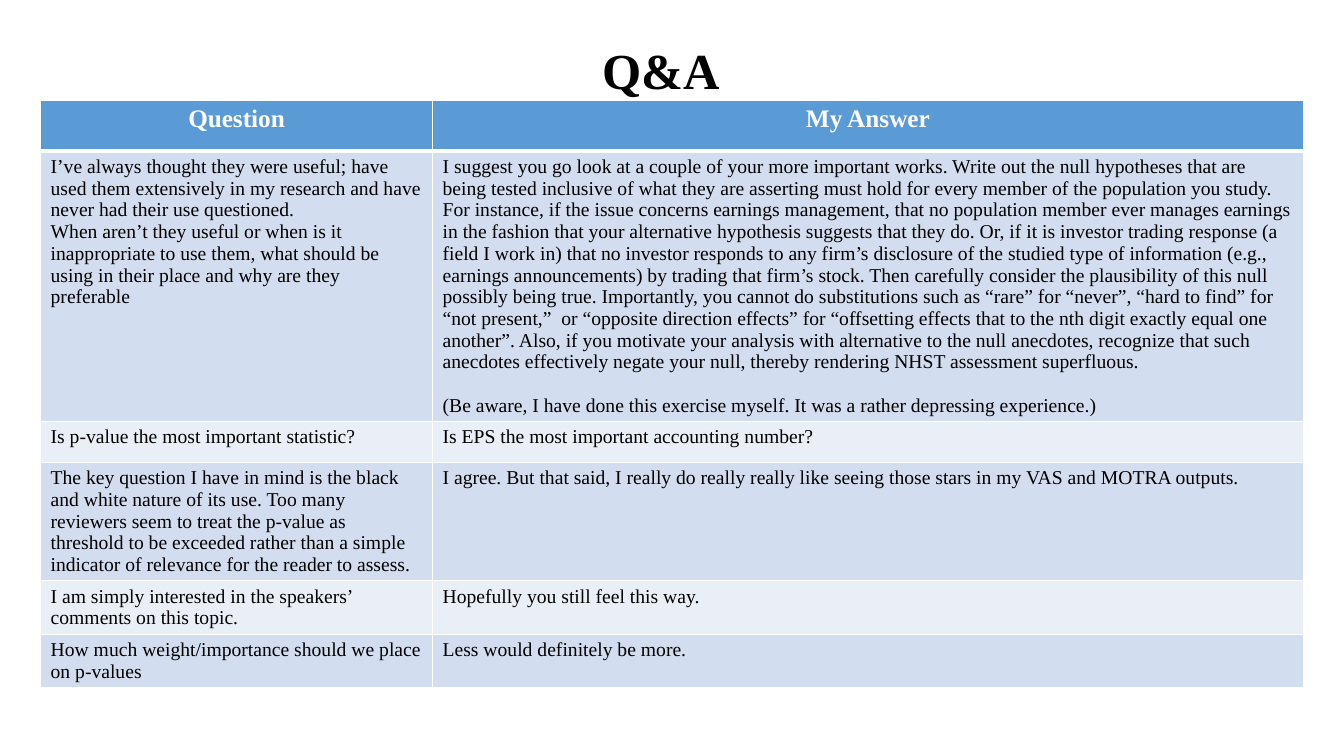
"""Build a Q&A slide: a title above a two-column table of questions and answers."""
from lxml.etree import SubElement
from pptx import Presentation
from pptx.dml.color import RGBColor
from pptx.enum.text import MSO_ANCHOR as Anchor, MSO_AUTO_SIZE as AutoSize, PP_ALIGN as Align
from pptx.oxml.ns import qn
from pptx.util import Pt

COLORS = {
    "black": "000000",
    "white": "FFFFFF",
    "header": "5B9BD5",
    "band_dark": "D2DEEF",
    "band_light": "EAEFF7",
}

HEADERS = ["Question", "My Answer"]
NULL_ADVICE = [
    "I suggest you go look at a couple of your more important works.",
    "Write out the null hypotheses that are being tested inclusive of what they are asserting "
    "must hold for every member of the population you study.",
    "For instance, if the issue concerns earnings management, that no population member ever "
    "manages earnings in the fashion that your alternative hypothesis suggests that they do.",
    "Or, if it is investor trading response (a field I work in) that no investor responds to any "
    "firm’s disclosure of the studied type of information (e.g., earnings announcements) by "
    "trading that firm’s stock.",
    "Then carefully consider the plausibility of this null possibly being true.",
    "Importantly, you cannot do substitutions such as “rare” for “never”, “hard to find” for "
    "“not present,”  or “opposite direction effects” for “offsetting effects that to the nth "
    "digit exactly equal one another”.",
    "Also, if you motivate your analysis with alternative to the null anecdotes, recognize that "
    "such anecdotes effectively negate your null, thereby rendering NHST assessment superfluous.",
]
CLOSING_REMARK = (
    "(Be aware, I have done this exercise myself. It was a rather depressing experience.)"
)
ROWS = [
    (
        "I’ve always thought they were useful; have used them extensively in my research "
        "and have never had their use questioned.\n"
        "When aren’t they useful or when is it inappropriate to use them, what should be "
        "using in their place and why are they preferable",
        "\n".join([" ".join(NULL_ADVICE), CLOSING_REMARK]),
    ),
    (
        "Is p-value the most important statistic?",
        "Is EPS the most important accounting number?",
    ),
    (
        "The key question I have in mind is the black and white nature of its use. Too many "
        "reviewers seem to treat the p-value as threshold to be exceeded rather than a simple "
        "indicator of relevance for the reader to assess.",
        "I agree. But that said, I really do really really like seeing those stars in my VAS "
        "and MOTRA outputs.",
    ),
    (
        "I am simply interested in the speakers’ comments on this topic.",
        "Hopefully you still feel this way.",
    ),
    (
        "How much weight/importance should we place on p-values",
        "Less would definitely be more.",
    ),
]


class SlideBuilder:
    """Hold the text style and the current slide, and add elements to it."""

    def __init__(self, slide, font_name):
        self.slide = slide
        self.font_name = font_name

    def format_text(self, text_frame, size, color, bold=False, align=Align.LEFT):
        """Apply one style to every paragraph and run of a text frame."""
        for paragraph in text_frame.paragraphs:
            paragraph.alignment = align
            for run in paragraph.runs:
                run.font.name = self.font_name
                run.font.size = Pt(size)
                run.font.bold = bold
                run.font.color.rgb = RGBColor.from_string(COLORS[color])

    def title(self, text, left, top, width, height):
        """Place and format the title placeholder."""
        shape = self.slide.shapes.title
        shape.left, shape.top, shape.width, shape.height = map(Pt, (left, top, width, height))
        text_frame = shape.text_frame
        text_frame.text = text
        text_frame.auto_size = AutoSize.NONE
        text_frame.vertical_anchor = Anchor.MIDDLE
        text_frame.paragraphs[0].line_spacing = 0.9
        self.format_text(text_frame, 36, "black", bold=True, align=Align.CENTER)

    def cell_borders(self, cell, bottom_width):
        """Draw white borders around a cell, with a chosen bottom width."""
        properties = cell._tc.get_or_add_tcPr()
        for index, (tag, width) in enumerate(
            [("a:lnL", 1), ("a:lnR", 1), ("a:lnT", 1), ("a:lnB", bottom_width)]
        ):
            line = SubElement(properties, qn(tag), w=str(Pt(width)))
            fill = SubElement(line, qn("a:solidFill"))
            SubElement(fill, qn("a:srgbClr"), val=COLORS["white"])
            properties.insert(index, line)

    def cell(self, cell, text, fill, bottom_width=1, **style):
        """Fill a table cell with styled text."""
        cell.text_frame.text = text
        cell.fill.solid()
        cell.fill.fore_color.rgb = RGBColor.from_string(COLORS[fill])
        self.cell_borders(cell, bottom_width)
        self.format_text(cell.text_frame, **style)

    def table(self, headers, rows, left, top, column_widths, header_height, row_height):
        """Add a table with a header row and alternating bands."""
        height = header_height + row_height * len(rows)
        frame = self.slide.shapes.add_table(
            len(rows) + 1, len(headers), Pt(left), Pt(top), Pt(sum(column_widths)), Pt(height)
        )
        table = frame.table
        for column, width in zip(table.columns, column_widths):
            column.width = Pt(width)
        for row in table.rows:
            row.height = Pt(row_height)
        table.rows[0].height = Pt(header_height)
        for column_index, text in enumerate(headers):
            self.cell(table.cell(0, column_index), text, "header", bottom_width=3,
                      size=18, color="white", bold=True, align=Align.CENTER)
        for row_index, texts in enumerate(rows, start=1):
            band = "band_dark" if row_index % 2 else "band_light"
            for column_index, text in enumerate(texts):
                self.cell(table.cell(row_index, column_index), text, band, size=14, color="black")
        return table


def main():
    """Create the presentation and save it."""
    presentation = Presentation()
    presentation.slide_width, presentation.slide_height = Pt(960), Pt(540)
    slide = presentation.slides.add_slide(presentation.slide_layouts[5])
    builder = SlideBuilder(slide, "Times New Roman")
    builder.title("Q&A", 36.5, 0, 871, 104.5)
    table = builder.table(HEADERS, ROWS, left=29, top=71.5, column_widths=[280, 622],
                          header_height=36.5, row_height=29.2)
    closing_paragraph = table.cell(1, 1).text_frame.paragraphs[-1]
    closing_paragraph.space_before = Pt(15.5)
    presentation.save("out.pptx")


if __name__ == "__main__":
    main()
